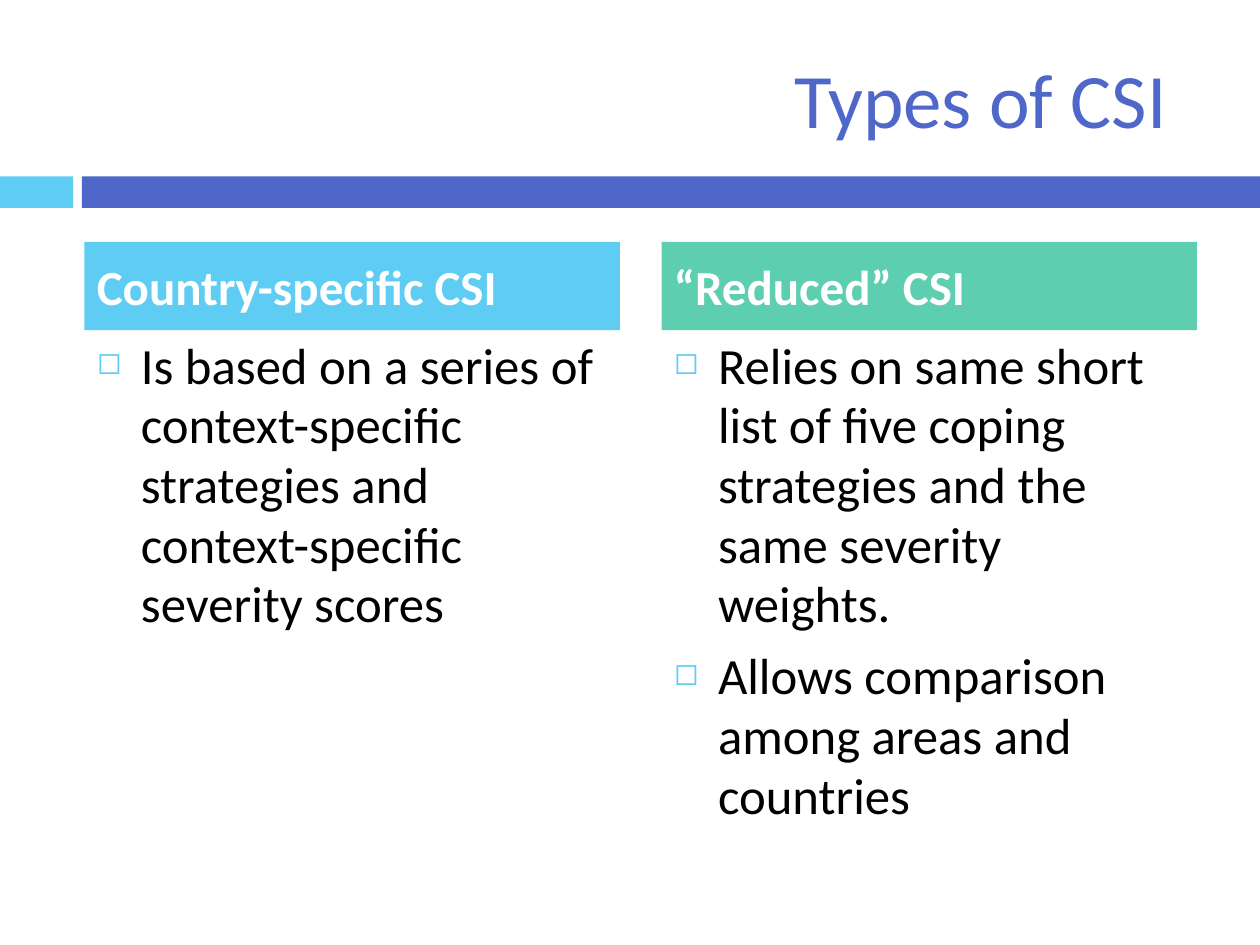
from lxml import etree
from pptx import Presentation
from pptx.dml.color import RGBColor
from pptx.enum.shapes import MSO_SHAPE
from pptx.enum.text import MSO_ANCHOR, PP_ALIGN
from pptx.oxml.ns import qn
from pptx.util import Inches, Pt

RECT = MSO_SHAPE.RECTANGLE
TOP, MIDDLE = MSO_ANCHOR.TOP, MSO_ANCHOR.MIDDLE
LEFT, RIGHT = PP_ALIGN.LEFT, PP_ALIGN.RIGHT

COLORS = {"blue": "4E67C8", "sky": "5ECCF3", "green": "5DCEAF",
          "white": "FFFFFF", "black": "000000"}
FONT = "Calibri"

TITLE = "Types of CSI "
COLUMNS = [
    ("Country-specific CSI", "sky", [
        "Is based on a series of context-specific strategies and "
        "context-specific severity scores",
    ]),
    ("“Reduced” CSI", "green", [
        "Relies on same short list of five coping strategies and the "
        "same severity weights.",
        "Allows comparison among areas and countries",
    ]),
]
BANDS = [(0, 0.58, "sky"), (0.65, 9.35, "blue")]  # left, width, colour

COL_LEFT, COL_STEP, COL_WIDTH = 0.67, 4.58, 4.25
HEAD_TOP, HEAD_HIGH = 1.92, 0.7
LIST_TOP, LIST_HIGH = 2.67, 3.92


def rgb(name):
    return RGBColor.from_string(COLORS[name])


def add_box(slide, box, fill):
    shape = slide.shapes.add_shape(RECT, *map(Inches, box))
    shape.shadow.inherit = False
    shape.fill.solid()
    shape.fill.fore_color.rgb = rgb(fill)
    shape.line.fill.background()
    return shape


def add_bullet(para):
    props = para._p.get_or_add_pPr()
    props.set("marL", str(Inches(0.35)))
    props.set("indent", str(-Inches(0.35)))
    color = etree.SubElement(props, qn("a:buClr"))
    etree.SubElement(color, qn("a:srgbClr"), val=COLORS["sky"])
    etree.SubElement(props, qn("a:buSzPct"), val="60000")
    etree.SubElement(props, qn("a:buChar"), char="◻")


def write(shape, lines, size, color, bold=False, align=LEFT, anchor=MIDDLE,
          before=0, spacing=None, bullet=False, inset=0.05):
    frame = shape.text_frame
    frame.word_wrap = True
    frame.vertical_anchor = anchor
    frame.margin_top = Inches(inset)
    for i, line in enumerate(lines):
        para = frame.add_paragraph() if i else frame.paragraphs[0]
        para.alignment = align
        para.space_before = Pt(before)
        para.line_spacing = spacing
        if bullet:
            add_bullet(para)
        run = para.add_run()
        run.text = line
        run.font.name = FONT
        run.font.size = Pt(size)
        run.font.bold = bold
        run.font.color.rgb = rgb(color)


def add_text(slide, box, lines, **style):
    write(slide.shapes.add_textbox(*map(Inches, box)), lines, **style)


def main():
    deck = Presentation()
    deck.slide_width, deck.slide_height = Inches(10), Inches(7.5)
    slide = deck.slides.add_slide(deck.slide_layouts[6])

    for left, width, fill in BANDS:
        add_box(slide, (left, 1.4, width, 0.25), fill)
    add_text(slide, (0.58, 0.3, 8.92, 0.95), [TITLE],
             size=44, color="blue", align=RIGHT)

    for i, (head, fill, items) in enumerate(COLUMNS):
        left = COL_LEFT + i * COL_STEP
        bar = add_box(slide, (left, HEAD_TOP, COL_WIDTH, HEAD_HIGH), fill)
        write(bar, [head], size=28, color="white", bold=True, before=7)
        add_text(slide, (left, LIST_TOP, COL_WIDTH, LIST_HIGH), items,
                 size=29, color="black", anchor=TOP, before=7,
                 spacing=0.98, bullet=True, inset=0)

    deck.save("out.pptx")


if __name__ == "__main__":
    main()
